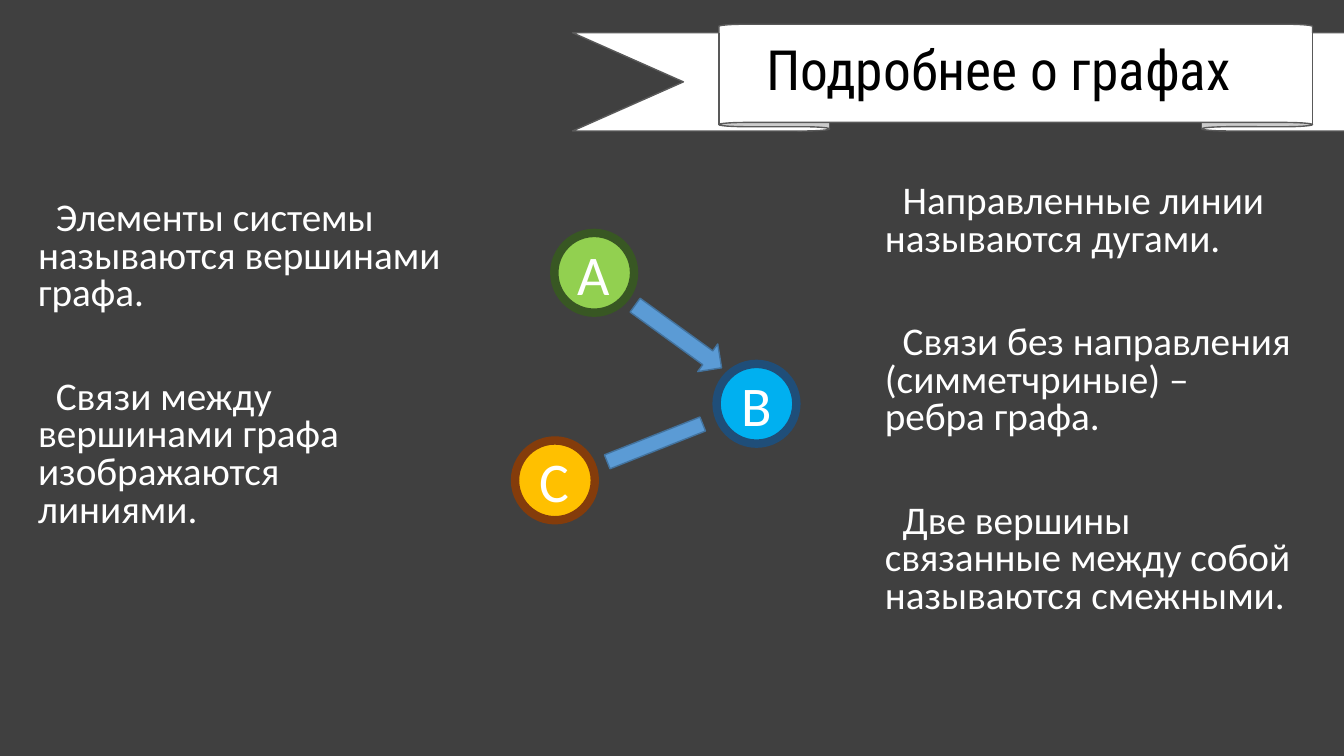
from dataclasses import dataclass

from pptx import Presentation
from pptx.dml.color import RGBColor
from pptx.enum.shapes import MSO_SHAPE as Form
from pptx.enum.text import MSO_ANCHOR as Anchor, MSO_AUTO_SIZE as Fit, PP_ALIGN as Align
from pptx.shapes.autoshape import Shape
from pptx.slide import Slide
from pptx.text.text import TextFrame as Frame
from pptx.util import Cm, Pt

DARK = RGBColor(0x40, 0x40, 0x40)
GREY = RGBColor(0x59, 0x59, 0x59)
WHITE = RGBColor(0xFF, 0xFF, 0xFF)
BLACK = RGBColor(0x00, 0x00, 0x00)
BLUE = RGBColor(0x5B, 0x9B, 0xD5)
NAVY = RGBColor(0x43, 0x73, 0x9E)
SKY = RGBColor(0x00, 0xB0, 0xF0)
DEEP = RGBColor(0x1F, 0x4E, 0x79)
GREEN = RGBColor(0x92, 0xD0, 0x50)
MOSS = RGBColor(0x38, 0x57, 0x23)
GOLD = RGBColor(0xFF, 0xC0, 0x00)
BROWN = RGBColor(0x84, 0x3C, 0x0B)

NODE = 2.01
PLAIN = {"name": "Calibri", "size": Pt(28)}
LABEL = {"name": "Calibri", "size": Pt(40)}
HEAD = {"name": "Roboto Condensed", "size": Pt(39.6), "bold": False}


@dataclass
class Box:
    left: float
    top: float
    width: float
    height: float

    def span(self) -> tuple[int, ...]:
        return Cm(self.left), Cm(self.top), Cm(self.width), Cm(self.height)


@dataclass
class Node:
    name: str
    left: float
    top: float
    fill: RGBColor
    line: RGBColor


@dataclass
class Link:
    form: Form
    box: Box
    turn: float


@dataclass
class Note:
    box: Box
    lines: list[str]


NODES = [
    Node("А", 13.97, 5.87, GREEN, MOSS),
    Node("В", 18.06, 9.17, SKY, DEEP),
    Node("С", 12.98, 11.1, GOLD, BROWN),
]
LINKS = [
    Link(Form.RIGHT_ARROW, Box(15.75, 8.05, 2.69, 0.86), 35.9),
    Link(Form.RECTANGLE, Box(15.21, 10.97, 2.59, 0.38), 158.4),
]
NOTES = [
    Note(Box(0.71, 4.95, 10.8, 9.17), [
        "Элементы системы называются вершинами графа.",
        "Связи между вершинами графа изображаются линиями.",
    ]),
    Note(Box(22.05, 4.52, 10.8, 12.01), [
        "Направленные линии называются дугами.",
        "Связи без направления (симметчриные) – ребра графа.",
        "Две вершины связанные между собой называются смежными.",
    ]),
]


def write(frame: Frame, lines: list[str], style: dict, color: RGBColor,
          align: Align, space: float = 1.0, gap: float = 0, indent: float = 0) -> None:
    for i, line in enumerate(lines):
        para = frame.add_paragraph() if i else frame.paragraphs[0]
        para.text = line
        para.alignment = align
        para.line_spacing = space
        para.space_before = Pt(gap if i else 0)
        if indent:
            para._p.get_or_add_pPr().set("indent", str(Cm(indent)))
        for key, value in style.items():
            setattr(para.font, key, value)
        para.font.color.rgb = color


def draw(slide: Slide, form: Form, box: Box, fill: RGBColor, line: RGBColor,
         width: float = 1, turn: float = 0) -> Shape:
    shape = slide.shapes.add_shape(form, *box.span())
    shape.shadow.inherit = False
    shape.rotation = turn
    shape.fill.solid()
    shape.fill.fore_color.rgb = fill
    shape.line.color.rgb = line
    shape.line.width = Pt(width)
    return shape


def add_head(slide: Slide) -> None:
    ribbon = draw(slide, Form.DOWN_RIBBON, Box(14.43, 0.61, 22.33, 2.69), WHITE, GREY, turn=180)
    ribbon.adjustments[0] = 0.08
    ribbon.adjustments[1] = 0.67
    title = slide.shapes.title
    title._element.addprevious(ribbon._element)
    title.left, title.top, title.width, title.height = Box(19.05, 0.61, 13.08, 2.41).span()
    frame = title.text_frame
    frame.auto_size = Fit.NONE
    frame.vertical_anchor = Anchor.MIDDLE
    write(frame, ["Подробнее о графах"], HEAD, BLACK, Align.LEFT, 0.9)


def add_node(slide: Slide, node: Node) -> None:
    box = Box(node.left, node.top, NODE, NODE)
    shape = draw(slide, Form.FLOWCHART_CONNECTOR, box, node.fill, node.line, 6)
    shape.text_frame.vertical_anchor = Anchor.MIDDLE
    write(shape.text_frame, [node.name], LABEL, WHITE, Align.CENTER)


def add_note(slide: Slide, note: Note) -> None:
    frame = slide.shapes.add_textbox(*note.box.span()).text_frame
    frame.word_wrap = True
    write(frame, note.lines, PLAIN, WHITE, Align.LEFT, 0.8, 47, 0.45)


def main() -> None:
    deck = Presentation()
    deck.slide_width, deck.slide_height = Cm(33.87), Cm(19.05)
    slide = deck.slides.add_slide(deck.slide_layouts[5])
    slide.background.fill.solid()
    slide.background.fill.fore_color.rgb = DARK
    add_head(slide)
    for node in NODES:
        add_node(slide, node)
    for link in LINKS:
        draw(slide, link.form, link.box, BLUE, NAVY, turn=link.turn)
    for note in NOTES:
        add_note(slide, note)
    deck.save("out.pptx")


if __name__ == "__main__":
    main()
